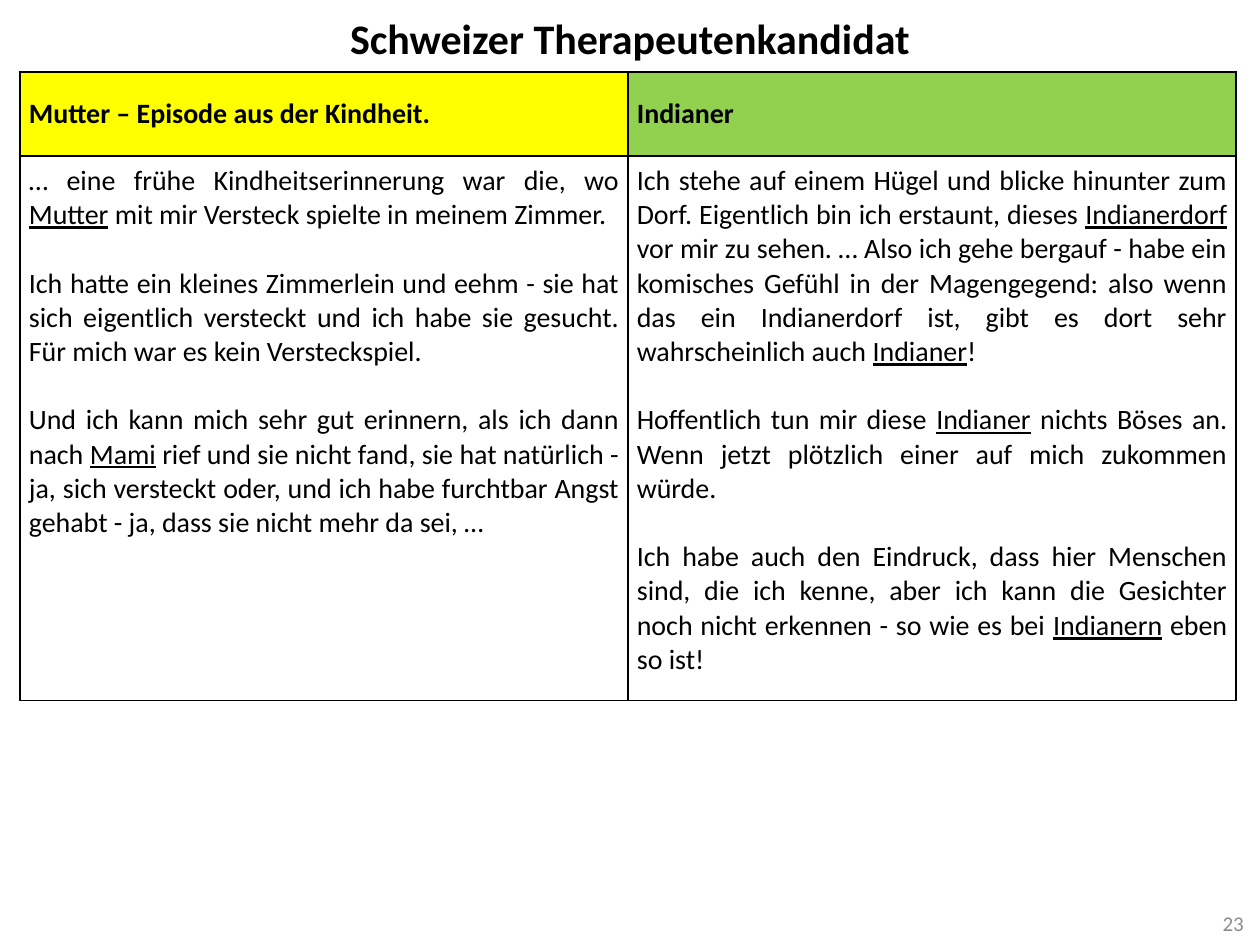
"""Build a slide comparing a childhood memory with a later scene in a two-column table."""
from lxml.etree import SubElement
from pptx import Presentation
from pptx.dml.color import RGBColor
from pptx.enum.text import MSO_ANCHOR as Anchor, PP_ALIGN as Align
from pptx.oxml.ns import qn
from pptx.util import Inches, Pt

BLACK = RGBColor(0x00, 0x00, 0x00)
GREY = RGBColor(0x8C, 0x8C, 0x8C)
YELLOW = RGBColor(0xFF, 0xFF, 0x00)
GREEN = RGBColor(0x92, 0xD0, 0x50)
WHITE = RGBColor(0xFF, 0xFF, 0xFF)

COLUMNS = [
    ("Mutter – Episode aus der Kindheit.", YELLOW, [
        "… eine frühe Kindheitserinnerung war die, wo _Mutter_ mit mir Versteck spielte in meinem Zimmer. ",
        "Ich hatte ein kleines Zimmerlein und eehm - sie hat sich eigentlich versteckt und ich habe sie "
        "gesucht. Für mich war es kein Versteckspiel. ",
        "Und ich kann mich sehr gut erinnern, als ich dann nach _Mami_ rief und sie nicht fand, sie hat "
        "natürlich - ja, sich versteckt oder, und ich habe furchtbar Angst gehabt - ja, dass sie nicht "
        "mehr da sei, …",
    ]),
    ("Indianer", GREEN, [
        "Ich stehe auf einem Hügel und blicke hinunter zum Dorf. Eigentlich bin ich erstaunt, dieses "
        "_Indianerdorf_ vor mir zu sehen. … Also ich gehe bergauf - habe ein komisches Gefühl in der "
        "Magengegend: also wenn das ein Indianerdorf ist, gibt es dort sehr wahrscheinlich auch _Indianer_!",
        "Hoffentlich tun mir diese _Indianer_ nichts Böses an. Wenn jetzt plötzlich einer auf mich "
        "zukommen würde. ",
        "Ich habe auch den Eindruck, dass hier Menschen sind, die ich kenne, aber ich kann die Gesichter "
        "noch nicht erkennen - so wie es bei _Indianern_ eben so ist!",
    ]),
]


def write(frame, paragraphs, size=16, color=BLACK, bold=False, align=Align.JUSTIFY):
    """Fill a text frame, underlining the words between underscores."""
    frame.word_wrap = True
    for number, text in enumerate(paragraphs):
        para = frame.add_paragraph() if number else frame.paragraphs[0]
        para.alignment = align
        para.space_before = Pt(19.5 if number else 0)
        for index, part in enumerate(text.split("_")):
            span = para.add_run()
            span.text = part
            span.font.name = "Calibri"
            span.font.size = Pt(size)
            span.font.bold = bold
            span.font.underline = index % 2 == 1
            span.font.color.rgb = color


def outline(cell):
    """Draw a thin black border on every side of a cell."""
    properties = cell._tc.get_or_add_tcPr()
    for position, side in enumerate(("lnL", "lnR", "lnT", "lnB")):
        line = SubElement(properties, qn(f"a:{side}"), w=str(Pt(1)))
        fill = SubElement(line, qn("a:solidFill"))
        SubElement(fill, qn("a:srgbClr"), val=str(BLACK))
        properties.insert(position, line)


deck = Presentation()
deck.slide_width, deck.slide_height = Inches(10), Inches(7.5)
page = deck.slides.add_slide(deck.slide_layouts[6])
width, height = deck.slide_width, deck.slide_height

title = page.shapes.add_textbox(0, 0, width, int(height * 0.08)).text_frame
title.vertical_anchor = Anchor.MIDDLE
write(title, ["Schweizer Therapeutenkandidat"], size=24, bold=True, align=Align.CENTER)

row_heights = [Inches(0.67), Inches(4.32)]
table = page.shapes.add_table(
    2, 2, Inches(0.16), Inches(0.57), Inches(9.65), sum(row_heights)).table
for row, row_height in zip(table.rows, row_heights):
    row.height = row_height

for column, (heading, color, story) in enumerate(COLUMNS):
    for row, (paragraphs, fill) in enumerate([([heading], color), (story, WHITE)]):
        cell = table.cell(row, column)
        cell.fill.solid()
        cell.fill.fore_color.rgb = fill
        cell.margin_left = cell.margin_right = Inches(0.07)
        cell.margin_top = cell.margin_bottom = Inches(0.06)
        cell.vertical_anchor = Anchor.TOP if row else Anchor.MIDDLE
        write(cell.text_frame, paragraphs, bold=row == 0)
        outline(cell)

number_box = page.shapes.add_textbox(
    Inches(9.56), int(height * 0.95), Inches(0.41), Inches(0.4)).text_frame
number_box.vertical_anchor = Anchor.MIDDLE
write(number_box, ["23"], size=12, color=GREY, align=Align.RIGHT)

deck.save("out.pptx")
